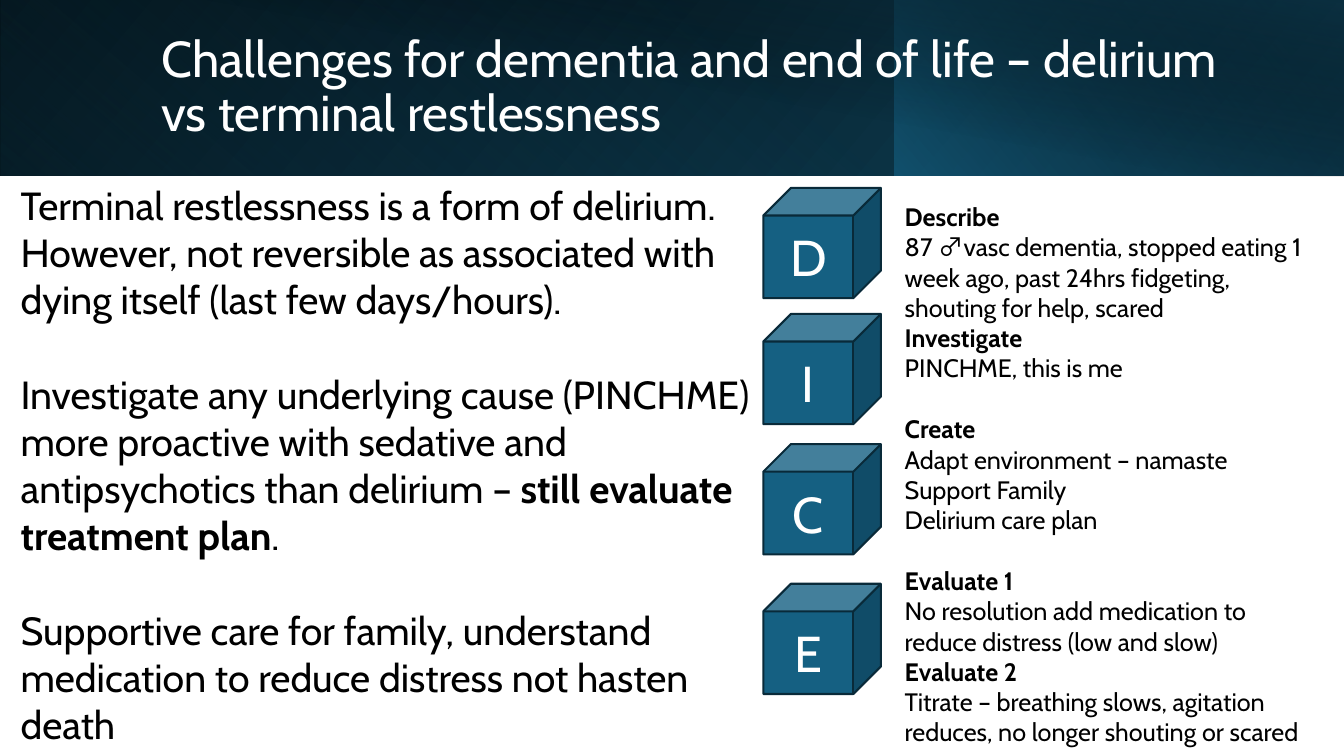
from dataclasses import dataclass

import lxml.etree
import pptx
import pptx.dml.color
import pptx.enum.shapes
import pptx.enum.text
import pptx.oxml
import pptx.oxml.ns
import pptx.util

EMU_PER_PX = 9525
FONT = "Cabin"
SYMBOL_FONT = "Noto Sans CJK JP"
RGBColor = pptx.dml.color.RGBColor
WHITE = RGBColor(0xFF, 0xFF, 0xFF)
BLACK = RGBColor(0x00, 0x00, 0x00)
BLUE = RGBColor(0x15, 0x60, 0x82)
MID_BLUE = RGBColor(0x10, 0x48, 0x62)
DEEP_BLUE = RGBColor(0x0B, 0x30, 0x41)
OUTLINE = RGBColor(0x09, 0x2A, 0x39)


@dataclass(frozen=True)
class Box:
    left: int
    top: int
    width: int
    height: int

    def emu(self) -> list[int]:
        return [px * EMU_PER_PX for px in (self.left, self.top, self.width, self.height)]


@dataclass(frozen=True)
class Stop:
    position: int
    color: RGBColor
    alpha: int = 100


@dataclass(frozen=True)
class Banner:
    box: Box
    angle: int
    stops: tuple[Stop, ...]
    flipped: bool = True
    rotation: int = 0


@dataclass(frozen=True)
class Run:
    text: str
    bold: bool = False
    font: str = FONT


@dataclass(frozen=True)
class Line:
    runs: tuple[Run, ...]
    space_before: int = 0


BANNERS = (
    Banner(Box(0, 0, 1280, 167), 140, (Stop(0, BLACK), Stop(100, MID_BLUE))),
    Banner(Box(0, 0, 852, 167), 230, (Stop(20, BLUE, 0), Stop(100, DEEP_BLUE, 55)), rotation=180),
    Banner(Box(852, 0, 428, 167), 220, (Stop(0, BLUE, 66), Stop(100, BLACK, 30))),
    Banner(Box(48, 0, 1232, 168), 280, (Stop(50, BLACK, 0), Stop(99, DEEP_BLUE, 52)), flipped=False),
)
TITLE = Line((Run("Challenges for dementia and end of life – delirium vs terminal restlessness"),))
RESTLESSNESS = (
    Line((Run("Terminal restlessness is a form of delirium. However, not reversible as "
              "associated with dying itself (last few days/hours)."),)),
    Line((Run("Investigate any underlying cause (PINCHME) more proactive with sedative and "
              "antipsychotics than delirium – "),
          Run("still evaluate treatment plan", bold=True), Run(".")), 34),
    Line((Run("Supportive care for family, understand medication to reduce distress "
              "not hasten death"),), 34),
)
DICE_STEPS = (
    Line((Run("Describe", bold=True),)),
    Line((Run("87 "), Run("♂", font=SYMBOL_FONT),
          Run("vasc dementia, stopped eating 1 week ago, past 24hrs fidgeting, "
              "shouting for help, scared"))),
    Line((Run("Investigate", bold=True),)),
    Line((Run("PINCHME, this is me"),)),
    Line((Run("Create", bold=True),), 22),
    Line((Run("Adapt environment – namaste"),)),
    Line((Run("Support Family"),)),
    Line((Run("Delirium care plan"),)),
    Line((Run("Evaluate 1", bold=True),), 22),
    Line((Run("No resolution add medication to reduce distress (low and slow)"),)),
    Line((Run("Evaluate 2", bold=True),)),
    Line((Run("Titrate – breathing slows, agitation reduces, no longer shouting or scared"),)),
)
CUBE_TOPS = {"D": 179, "I": 299, "C": 423, "E": 556}


def add_runs(paragraph, line: Line, size: int, color: RGBColor) -> None:
    for item in line.runs:
        run = paragraph.add_run()
        run.text = item.text
        run.font.name = item.font
        run.font.size = pptx.util.Pt(size)
        run.font.bold = item.bold
        run.font.color.rgb = color


def apply_gradient(shape, banner: Banner) -> None:
    """Replace the fill with a linear gradient that carries transparency."""
    shape.fill.background()
    properties = shape.element.spPr
    qn = pptx.oxml.ns.qn
    gradient = pptx.oxml.parse_xml(f'<a:gradFill {pptx.oxml.ns.nsdecls("a")}/>')
    stop_list = lxml.etree.SubElement(gradient, qn("a:gsLst"))
    for stop in banner.stops:
        entry = lxml.etree.SubElement(stop_list, qn("a:gs"), pos=str(stop.position * 1000))
        color = lxml.etree.SubElement(entry, qn("a:srgbClr"), val=str(stop.color))
        lxml.etree.SubElement(color, qn("a:alpha"), val=str(stop.alpha * 1000))
    lxml.etree.SubElement(gradient, qn("a:lin"), ang=str(banner.angle * 60000), scaled="0")
    properties.replace(properties.find(qn("a:noFill")), gradient)


def add_banner(slide, banner: Banner) -> None:
    shape = slide.shapes.add_shape(pptx.enum.shapes.MSO_SHAPE.RECTANGLE, *banner.box.emu())
    shape.shadow.inherit = False
    shape.line.fill.background()
    shape.rotation = banner.rotation
    if banner.flipped:
        shape.element.spPr.find(pptx.oxml.ns.qn("a:xfrm")).set("flipH", "1")
    apply_gradient(shape, banner)


def add_cube(slide, letter: str, top: int) -> None:
    box = Box(727, top, 112, 105)
    shape = slide.shapes.add_shape(pptx.enum.shapes.MSO_SHAPE.CUBE, *box.emu())
    shape.shadow.inherit = False
    shape.fill.solid()
    shape.fill.fore_color.rgb = BLUE
    shape.line.color.rgb = OUTLINE
    shape.line.width = pptx.util.Pt(1.5)
    shape.text_frame.vertical_anchor = pptx.enum.text.MSO_ANCHOR.MIDDLE
    paragraph = shape.text_frame.paragraphs[0]
    paragraph.alignment = pptx.enum.text.PP_ALIGN.CENTER
    add_runs(paragraph, Line((Run(letter),)), 36, WHITE)


def fill_placeholder(placeholder, box: Box, lines: tuple[Line, ...], size: int,
                     color: RGBColor, anchor, spacing: float = 1.0) -> None:
    """Place the placeholder in front and write unbulleted, left-aligned lines."""
    placeholder.left, placeholder.top, placeholder.width, placeholder.height = box.emu()
    placeholder.element.getparent().append(placeholder.element)
    frame = placeholder.text_frame
    frame.word_wrap = True
    frame.auto_size = pptx.enum.text.MSO_AUTO_SIZE.NONE
    frame.vertical_anchor = anchor
    for index, line in enumerate(lines):
        paragraph = frame.add_paragraph() if index else frame.paragraphs[0]
        paragraph.alignment = pptx.enum.text.PP_ALIGN.LEFT
        paragraph.line_spacing = spacing
        paragraph.space_before = pptx.util.Pt(line.space_before)
        add_runs(paragraph, line, size, color)
        properties = paragraph._p.get_or_add_pPr()
        properties.set("marL", "0")
        properties.set("indent", "0")
        lxml.etree.SubElement(properties, pptx.oxml.ns.qn("a:buNone"))


def main() -> None:
    presentation = pptx.Presentation()
    presentation.slide_width = 1280 * EMU_PER_PX
    presentation.slide_height = 720 * EMU_PER_PX
    slide = presentation.slides.add_slide(presentation.slide_layouts.get_by_name("Two Content"))
    title, restlessness, dice_steps = slide.placeholders
    for banner in BANNERS:
        add_banner(slide, banner)
    anchors = pptx.enum.text.MSO_ANCHOR
    fill_placeholder(title, Box(144, 30, 1039, 108), (TITLE,), 36, WHITE, anchors.MIDDLE, 0.9)
    fill_placeholder(restlessness, Box(10, 168, 716, 553), RESTLESSNESS, 28, BLACK, anchors.TOP)
    for letter, top in CUBE_TOPS.items():
        add_cube(slide, letter, top)
    fill_placeholder(dice_steps, Box(852, 187, 418, 533), DICE_STEPS, 18, BLACK, anchors.TOP)
    presentation.save("out.pptx")


if __name__ == "__main__":
    main()
